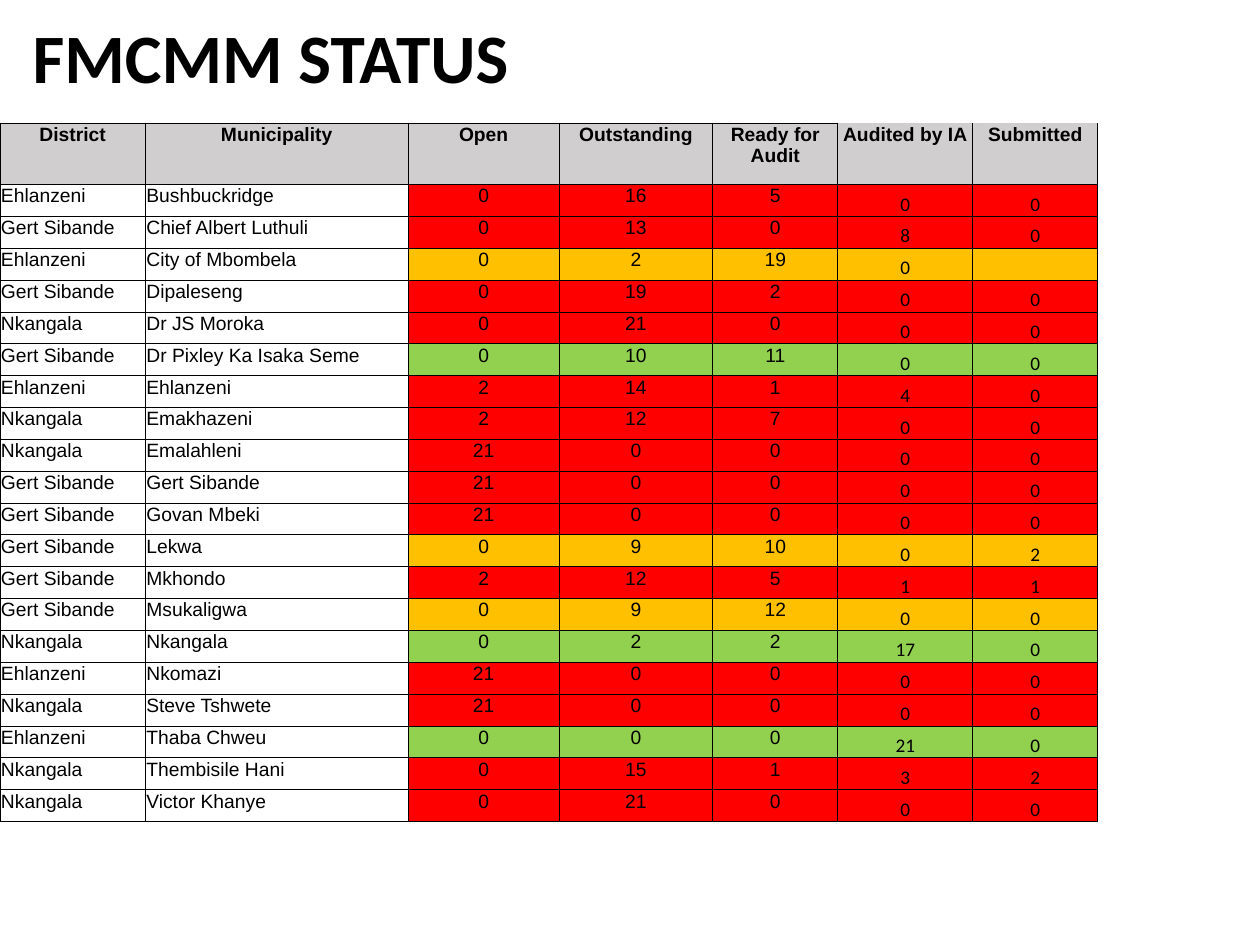
from lxml import etree
from pptx import Presentation
from pptx.dml.color import RGBColor
from pptx.enum.text import MSO_ANCHOR, PP_ALIGN
from pptx.oxml.ns import qn
from pptx.util import Cm, Pt

LEFT, CENTER = PP_ALIGN.LEFT, PP_ALIGN.CENTER
TOP, MIDDLE, BOTTOM = MSO_ANCHOR.TOP, MSO_ANCHOR.MIDDLE, MSO_ANCHOR.BOTTOM

BLACK = RGBColor(0x00, 0x00, 0x00)
GREY = RGBColor(0xD0, 0xCE, 0xCE)
RED = RGBColor(0xFF, 0x00, 0x00)
AMBER = RGBColor(0xFF, 0xC0, 0x00)
GREEN = RGBColor(0x92, 0xD0, 0x50)

COL_WIDTHS = [2.93, 5.3, 3.04, 3.1, 2.52, 2.72, 2.52]
HEADER_HEIGHT = 1.24
LABEL_COLS = 2
FIRST_AUDIT_COL = 5

HEADERS = ["District", "Municipality", "Open", "Outstanding",
           "Ready for Audit", "Audited by IA", "Submitted"]
STATUS_ROWS = [
    (RED, "Ehlanzeni", "Bushbuckridge", 0, 16, 5, 0, 0),
    (RED, "Gert Sibande", "Chief Albert Luthuli", 0, 13, 0, 8, 0),
    (AMBER, "Ehlanzeni", "City of Mbombela", 0, 2, 19, 0, ""),
    (RED, "Gert Sibande", "Dipaleseng", 0, 19, 2, 0, 0),
    (RED, "Nkangala", "Dr JS Moroka", 0, 21, 0, 0, 0),
    (GREEN, "Gert Sibande", "Dr Pixley Ka Isaka Seme", 0, 10, 11, 0, 0),
    (RED, "Ehlanzeni", "Ehlanzeni", 2, 14, 1, 4, 0),
    (RED, "Nkangala", "Emakhazeni", 2, 12, 7, 0, 0),
    (RED, "Nkangala", "Emalahleni", 21, 0, 0, 0, 0),
    (RED, "Gert Sibande", "Gert Sibande", 21, 0, 0, 0, 0),
    (RED, "Gert Sibande", "Govan Mbeki", 21, 0, 0, 0, 0),
    (AMBER, "Gert Sibande", "Lekwa", 0, 9, 10, 0, 2),
    (RED, "Gert Sibande", "Mkhondo", 2, 12, 5, 1, 1),
    (AMBER, "Gert Sibande", "Msukaligwa", 0, 9, 12, 0, 0),
    (GREEN, "Nkangala", "Nkangala", 0, 2, 2, 17, 0),
    (RED, "Ehlanzeni", "Nkomazi", 21, 0, 0, 0, 0),
    (RED, "Nkangala", "Steve Tshwete", 21, 0, 0, 0, 0),
    (GREEN, "Ehlanzeni", "Thaba Chweu", 0, 0, 0, 21, 0),
    (RED, "Nkangala", "Thembisile Hani", 0, 15, 1, 3, 2),
    (RED, "Nkangala", "Victor Khanye", 0, 21, 0, 0, 0),
]


def write_text(tf, text, size=11, font="Arial", bold=False, align=LEFT, spacing=None):
    p = tf.paragraphs[0]
    p.alignment = align
    if spacing:
        p.line_spacing = spacing
    if not text:
        # An empty cell keeps the text size, so that its row does not grow.
        etree.SubElement(p._p, qn("a:endParaRPr"), sz=str(size * 100))
        return
    r = p.add_run()
    r.text = text
    r.font.size = Pt(size)
    r.font.name = font
    r.font.bold = bold
    r.font.color.rgb = BLACK


def set_borders(cell, open_top=False):
    tc_pr = cell._tc.get_or_add_tcPr()
    for side in "LRTB":
        ln = etree.SubElement(tc_pr, qn(f"a:ln{side}"), w=str(Pt(0.5)))
        if side == "T" and open_top:
            etree.SubElement(ln, qn("a:noFill"))
        else:
            fill = etree.SubElement(ln, qn("a:solidFill"))
            etree.SubElement(fill, qn("a:srgbClr"), val=str(BLACK))


def format_cell(cell, text, fill=None, anchor=TOP, open_top=False, **text_format):
    cell.margin_left = cell.margin_right = cell.margin_top = Cm(0.02)
    cell.margin_bottom = 0
    cell.vertical_anchor = anchor
    set_borders(cell, open_top)
    if fill is None:
        cell.fill.background()
    else:
        cell.fill.solid()
        cell.fill.fore_color.rgb = fill
    write_text(cell.text_frame, text, **text_format)


def add_title(s, left, top, width, height):
    tf = s.shapes.add_textbox(Cm(left), Cm(top), Cm(width), Cm(height)).text_frame
    tf.word_wrap = True
    tf.vertical_anchor = MIDDLE
    write_text(tf, "FMCMM STATUS", size=39.6, font="Calibri", bold=True, spacing=0.9)


def add_status_table(s, left, top, height):
    row_height = (height - HEADER_HEIGHT) / len(STATUS_ROWS)
    table = s.shapes.add_table(len(STATUS_ROWS) + 1, len(HEADERS), Cm(left), Cm(top),
                               Cm(sum(COL_WIDTHS)), Cm(height)).table
    table.first_row = table.horz_banding = False
    for column, width in zip(table.columns, COL_WIDTHS):
        column.width = Cm(width)
    for i, row in enumerate(table.rows):
        row.height = Cm(row_height if i else HEADER_HEIGHT)

    for col, header in enumerate(HEADERS):
        format_cell(table.cell(0, col), header, fill=GREY, bold=True, align=CENTER,
                    open_top=col >= FIRST_AUDIT_COL)
    for i, (status, *values) in enumerate(STATUS_ROWS, start=1):
        for col, value in enumerate(values):
            cell = table.cell(i, col)
            if col < LABEL_COLS:
                format_cell(cell, value)
            elif col < FIRST_AUDIT_COL:
                format_cell(cell, str(value), fill=status, align=CENTER)
            else:
                format_cell(cell, str(value), fill=status, align=CENTER,
                            anchor=BOTTOM, font="Calibri")


def main():
    prs = Presentation()
    prs.slide_width, prs.slide_height = Cm(25.4), Cm(19.05)
    s = prs.slides.add_slide(prs.slide_layouts[6])
    add_title(s, 0.41, 0.51, 23.72, 1.45)
    add_status_table(s, 0, 2.48, 14.08)
    prs.save("out.pptx")


if __name__ == "__main__":
    main()
